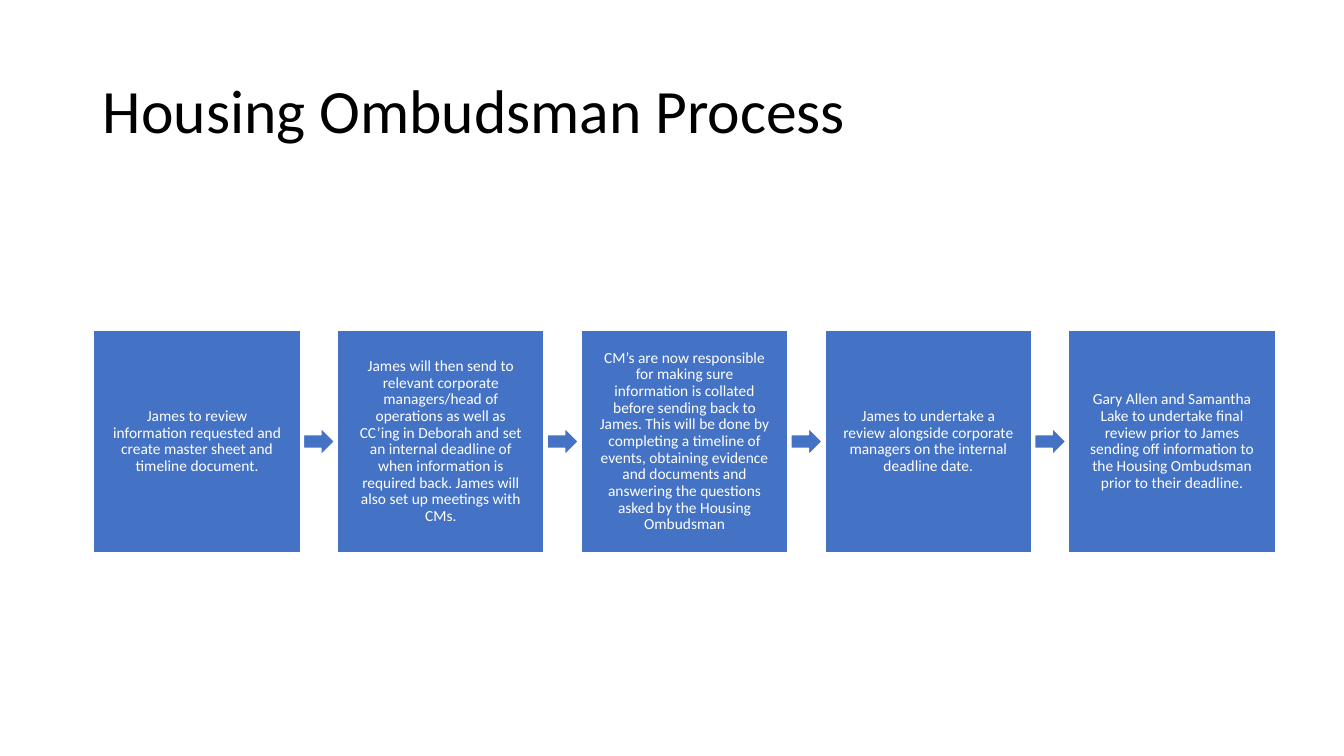
from pptx import Presentation
from pptx.dml.color import RGBColor
from pptx.enum.shapes import MSO_SHAPE as Shape
from pptx.enum.text import MSO_ANCHOR as Anchor, PP_ALIGN as Align
from pptx.util import Inches, Pt

# Content
TITLE = "Housing Ombudsman Process"
STEPS = [
    "James to review information requested and create master sheet and timeline document.",
    "James will then send to relevant corporate managers/head of operations as well as "
    "CC’ing in Deborah and set an internal deadline of when information is required back. "
    "James will also set up meetings with CMs.",
    "CM’s are now responsible for making sure information is collated before sending back "
    "to James. This will be done by completing a timeline of events, obtaining evidence and "
    "documents and answering the questions asked by the Housing Ombudsman",
    "James to undertake a review alongside corporate managers on the internal deadline date.",
    "Gary Allen and Samantha Lake to undertake final review prior to James sending off "
    "information to the Housing Ombudsman prior to their deadline.",
]
COLORS = {"step": "4472C4", "white": "FFFFFF", "title": "000000"}
FONT = "Calibri"

# Layout in inches
SLIDE_W, SLIDE_H = 13.33, 7.5
ROW_LEFT, ROW_RIGHT = 0.93, 12.65
BOX_W, BOX_H = 2.05, 2.2
ARROW_W, ARROW_H = 0.31, 0.27
PITCH = (ROW_RIGHT - ROW_LEFT - BOX_W) / (len(STEPS) - 1)
ROW_MIDDLE = 4.38
INSET = 0.17


def rgb(name):
    return RGBColor.from_string(COLORS[name])


def write(tf, text, size, color, align):
    tf.word_wrap = True
    tf.vertical_anchor = Anchor.MIDDLE
    p = tf.paragraphs[0]
    p.alignment = align
    p.line_spacing = 0.9
    r = p.add_run()
    r.text = text
    r.font.name = FONT
    r.font.size = Pt(size)
    r.font.color.rgb = rgb(color)


def add_block(s, kind, left, width, height):
    """Add a filled shape centred on the middle of the row."""
    sp = s.shapes.add_shape(kind, Inches(left), Inches(ROW_MIDDLE - height / 2),
                            Inches(width), Inches(height))
    sp.shadow.inherit = False
    sp.fill.solid()
    sp.fill.fore_color.rgb = rgb("step")
    sp.line.color.rgb = rgb("white")
    sp.line.width = Pt(1)
    return sp


def main():
    prs = Presentation()
    prs.slide_width, prs.slide_height = Inches(SLIDE_W), Inches(SLIDE_H)
    s = prs.slides.add_slide(prs.slide_layouts[5])

    # Title
    title = s.shapes.title
    title.left, title.top = Inches(0.92), Inches(0.4)
    title.width, title.height = Inches(11.5), Inches(1.45)
    write(title.text_frame, TITLE, 44, "title", Align.LEFT)

    # Process steps, with an arrow centred in each gap
    for i, step in enumerate(STEPS):
        left = ROW_LEFT + i * PITCH
        box = add_block(s, Shape.RECTANGLE, left, BOX_W, BOX_H)
        tf = box.text_frame
        tf.margin_left = tf.margin_right = Inches(INSET)
        tf.margin_top = tf.margin_bottom = Inches(INSET)
        write(tf, step, 11, "white", Align.CENTER)
        tf.paragraphs[0].space_after = Pt(3.85)
        if i < len(STEPS) - 1:
            gap_middle = left + (BOX_W + PITCH) / 2
            add_block(s, Shape.RIGHT_ARROW, gap_middle - ARROW_W / 2, ARROW_W, ARROW_H)

    prs.save("out.pptx")


if __name__ == "__main__":
    main()
